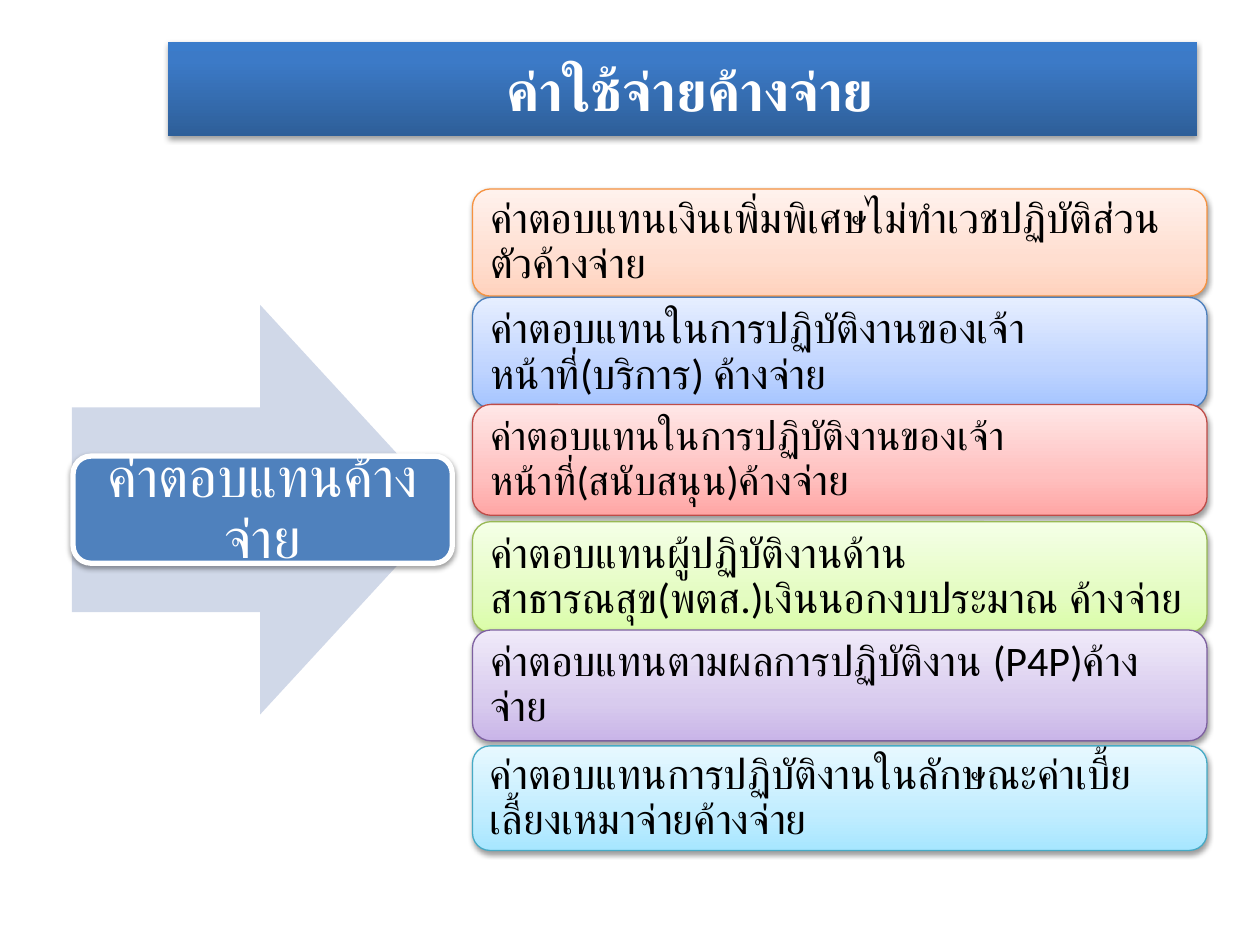
from typing import NamedTuple

from lxml import etree
from pptx import Presentation
from pptx.dml.color import RGBColor
from pptx.enum.shapes import MSO_SHAPE
from pptx.enum.text import MSO_ANCHOR, PP_ALIGN
from pptx.oxml import parse_xml
from pptx.oxml.ns import nsdecls, qn
from pptx.util import Inches, Pt

RECT, ROUND, ARROW = MSO_SHAPE.RECTANGLE, MSO_SHAPE.ROUNDED_RECTANGLE, MSO_SHAPE.RIGHT_ARROW
MIDDLE = MSO_ANCHOR.MIDDLE
LEFT, CENTER = PP_ALIGN.LEFT, PP_ALIGN.CENTER

FONT = "Calibri"
WHITE = RGBColor(0xFF, 0xFF, 0xFF)
BLACK = RGBColor(0x00, 0x00, 0x00)
BLUE = RGBColor(0x4F, 0x81, 0xBD)
PALE_BLUE = RGBColor(0xD0, 0xD8, 0xE8)
TITLE_STOPS = ((0, RGBColor(0x2E, 0x5F, 0x99)), (80, RGBColor(0x3C, 0x7A, 0xC7)),
               (100, RGBColor(0x3A, 0x7C, 0xCB)))


class Run(NamedTuple):
    text: str
    size: float


class Card(NamedTuple):
    top: float
    height: float
    line: RGBColor
    shades: tuple[RGBColor, ...]  # bottom to top
    runs: tuple[Run, ...]


def shades(*codes: str) -> tuple[RGBColor, ...]:
    return tuple(RGBColor.from_string(code) for code in codes)


CARDS = (
    Card(1.5, 0.85, RGBColor(0xF6, 0x92, 0x40), shades("FFD2BD", "FFDED0", "FFF2ED"),
         (Run("ค่าตอบแทนเงินเพิ่มพิเศษไม่ทำเวชปฏิบัติส่วนตัวค้างจ่าย", 24),)),
    Card(2.36, 0.88, RGBColor(0x4B, 0x7E, 0xBC), shades("A4C4FF", "BFD4FF", "E6EEFF"),
         (Run("ค่าตอบแทนในการปฏิบัติงานของเจ้าหน้าที่(บริการ) ค้างจ่าย", 24),)),
    Card(3.21, 0.88, RGBColor(0xBF, 0x4C, 0x48), shades("FFA6A5", "FFC0BF", "FFE7E7"),
         (Run("ค่าตอบแทนในการปฏิบัติงานของเจ้าหน้าที่(สนับสนุน)ค้าง", 23), Run("จ่าย", 24))),
    Card(4.14, 0.88, RGBColor(0x98, 0xB9, 0x55), shades("DAFDA7", "E4FCC2", "F5FFE7"),
         (Run("ค่าตอบแทนผู้ปฏิบัติงานด้านสาธารณสุข(พตส.)เงินนอกงบประมาณ ค้างจ่าย", 24),)),
    Card(5, 0.88, RGBColor(0x7D, 0x60, 0xA0), shades("C9B5E8", "D8CBEE", "F0EAF9"),
         (Run("ค่าตอบแทนตามผลการปฏิบัติงาน (P4P)ค้างจ่าย", 24),)),
    Card(5.92, 0.83, RGBColor(0x46, 0xAA, 0xC5), shades("A7E6FF", "C1EDFF", "E7F8FF"),
         (Run("ค่าตอบแทนการปฏิบัติงานในลักษณะค่าเบี้ยเลี้ยงเหมาจ่ายค้างจ่าย", 24),)),
)


def add_box(s, kind, left: float, top: float, width: float, height: float,
            fill: RGBColor | None = None, line: RGBColor | None = None, weight: float = 0.75):
    sp = s.shapes.add_shape(kind, Inches(left), Inches(top), Inches(width), Inches(height))
    sp.shadow.inherit = False
    if fill is not None:
        sp.fill.solid()
        sp.fill.fore_color.rgb = fill
    if line is None:
        sp.line.fill.background()
    else:
        sp.line.color.rgb = line
        sp.line.width = Pt(weight)
    return sp


def set_gradient(sp, stops) -> None:
    """Fill from bottom to top through (percent, colour) stops."""
    gs = "".join(f'<a:gs pos="{pos * 1000}"><a:srgbClr val="{color}"/></a:gs>'
                 for pos, color in stops)
    fill = parse_xml(f'<a:gradFill {nsdecls("a")} rotWithShape="1"><a:gsLst>{gs}</a:gsLst>'
                     '<a:lin ang="16200000" scaled="0"/></a:gradFill>')
    sp._element.spPr.find(qn("a:prstGeom")).addnext(fill)


def add_shadow(sp) -> None:
    effects = sp._element.spPr.find(qn("a:effectLst"))
    shadow = etree.SubElement(effects, qn("a:outerShdw"), blurRad=str(Pt(3.1)),
                              dist=str(Pt(1.6)), dir="5400000", rotWithShape="0")
    color = etree.SubElement(shadow, qn("a:srgbClr"), val="000000")
    etree.SubElement(color, qn("a:alpha"), val="38000")


def add_text(sp, runs: tuple[Run, ...], color: RGBColor, align=LEFT, inset: float = 0.1,
             spacing: float = 0.9, bold: bool = False) -> None:
    tf = sp.text_frame
    tf.word_wrap = True
    tf.vertical_anchor = MIDDLE
    tf.margin_left = tf.margin_right = tf.margin_top = tf.margin_bottom = Inches(inset)
    p = tf.paragraphs[0]
    p.alignment = align
    p.line_spacing = spacing
    p.font.name = FONT
    p.font.bold = bold
    p.font.color.rgb = color
    for run in runs:
        r = p.add_run()
        r.text = run.text
        r.font.size = Pt(run.size)


def add_card(s, card: Card) -> None:
    sp = add_box(s, ROUND, 3.75, card.top, 5.83, card.height, line=card.line)
    set_gradient(sp, zip((0, 35, 100), card.shades))
    add_shadow(sp)
    add_text(sp, card.runs, BLACK)


def main() -> None:
    prs = Presentation()
    prs.slide_width, prs.slide_height = Inches(10), Inches(7.5)
    s = prs.slides.add_slide(prs.slide_layouts[6])

    # Title bar
    title = add_box(s, RECT, 1.33, 0.33, 8.17, 0.75)
    set_gradient(title, TITLE_STOPS)
    add_shadow(title)
    add_text(title, (Run(" ค่าใช้จ่ายค้างจ่าย", 32),), WHITE, CENTER, spacing=1, bold=True)

    # Arrow with its label
    add_box(s, ARROW, 0.57, 2.42, 2.99, 3.25, PALE_BLUE)
    label = add_box(s, ROUND, 0.58, 3.62, 3.01, 0.85, BLUE, WHITE, 3)
    add_shadow(label)
    add_text(label, (Run("ค่าตอบแทนค้างจ่าย", 32),), WHITE, CENTER, inset=0.13)

    # Expense cards
    for card in CARDS:
        add_card(s, card)

    prs.save("out.pptx")


if __name__ == "__main__":
    main()
